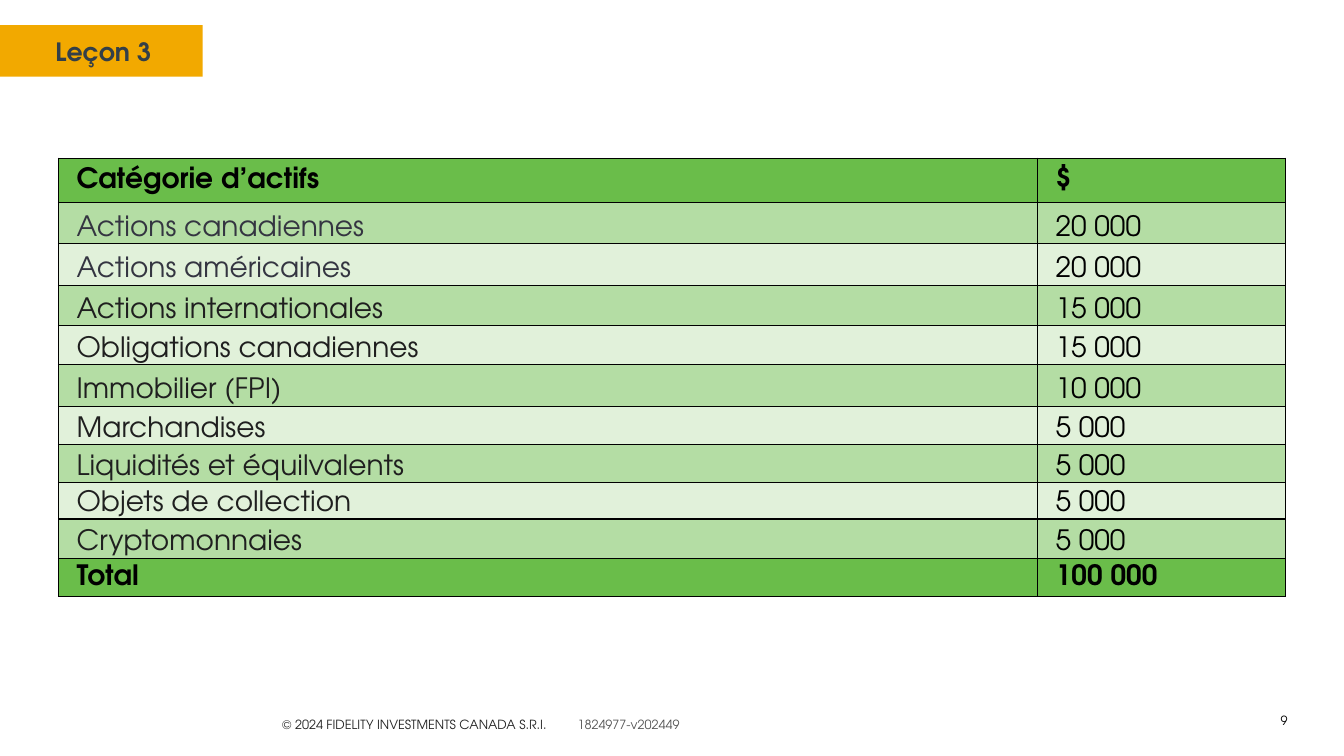
from lxml import etree
from pptx import Presentation
from pptx import util as u
from pptx.dml.color import RGBColor
from pptx.enum import shapes, text
from pptx.oxml.ns import qn

FONT = "TeX Gyre Adventor"
COLORS = {
    "black": "000000", "green": "6ABD4A", "amber": "F2A900", "slate": "333F48",
    "ink": "1F1F1F", "dusk": "343541", "legal": "222222", "grey": "545454",
}
ASSETS = [
    ("Actions canadiennes", 20000, "dusk"),
    ("Actions américaines", 20000, "dusk"),
    ("Actions internationales", 15000, "ink"),
    ("Obligations canadiennes", 15000, "ink"),
    ("Immobilier (FPI)", 10000, "ink"),
    ("Marchandises", 5000, "ink"),
    ("Liquidités et équilvalents", 5000, "ink"),
    ("Objets de collection", 5000, "ink"),
    ("Cryptomonnaies", 5000, "ink"),
]
COL_WIDTHS = [9.71, 2.46]
ROW_HEIGHTS = [0.44, 0.41, 0.41, 0.4, 0.39, 0.41, 0.38, 0.38, 0.36, 0.39, 0.38]


def style(run, size, color, bold=False):
    run.font.name, run.font.size, run.font.bold = FONT, u.Pt(size), bold
    run.font.color.rgb = RGBColor.from_string(COLORS[color])


def paint_cell(cell, alpha):
    cell.fill.solid()
    cell.fill.fore_color.rgb = RGBColor.from_string(COLORS["green"])
    tcPr = cell._tc.get_or_add_tcPr()
    if alpha < 100:
        clr = tcPr.find(".//" + qn("a:srgbClr"))
        etree.SubElement(clr, qn("a:alpha"), val=str(alpha * 1000))
    for i, side in enumerate(["lnL", "lnR", "lnT", "lnB"]):
        ln = etree.Element(qn("a:" + side), w=str(u.Pt(1)))
        fill = etree.SubElement(ln, qn("a:solidFill"))
        etree.SubElement(fill, qn("a:srgbClr"), val=COLORS["black"])
        tcPr.insert(i, ln)


prs = Presentation()
prs.slide_width, prs.slide_height = u.Inches(13.33), u.Inches(7.5)
s = prs.slides.add_slide(prs.slide_layouts[5])

# Lesson tag with the title on it
title = s.shapes.title
tag = s.shapes.add_shape(shapes.MSO_SHAPE.RECTANGLE, 0, u.Inches(0.25),
                         u.Inches(2.01), u.Inches(0.51))
tag.shadow.inherit = False
tag.fill.solid()
tag.fill.fore_color.rgb = RGBColor.from_string(COLORS["amber"])
tag.line.fill.background()
title._element.addprevious(tag._element)

title.left, title.top = u.Inches(0.45), u.Inches(0.31)
title.width, title.height = u.Inches(1.31), u.Inches(0.4)
tf = title.text_frame
tf.text = "Leçon 3"
tf.vertical_anchor = text.MSO_ANCHOR.MIDDLE
tf.paragraphs[0].alignment = text.PP_ALIGN.LEFT
style(tf.paragraphs[0].runs[0], 18, "slate", True)

# Asset table
total = sum(amount for _, amount, _ in ASSETS)
rows = [("Catégorie d’actifs", "$", "black")]
rows += [(name, f"{amount:,}".replace(",", " "), color) for name, amount, color in ASSETS]
rows += [("Total", f"{total:,}".replace(",", " "), "black")]

table = s.shapes.add_table(len(rows), 2, u.Inches(0.58), u.Inches(1.57),
                           u.Inches(sum(COL_WIDTHS)), u.Inches(sum(ROW_HEIGHTS))).table
for column, width in zip(table.columns, COL_WIDTHS):
    column.width = u.Inches(width)
for i, (name, amount, color) in enumerate(rows):
    table.rows[i].height = u.Inches(ROW_HEIGHTS[i])
    strong = i in (0, len(rows) - 1)
    for j, label in enumerate([name, amount]):
        cell = table.cell(i, j)
        cell.text = label
        p = cell.text_frame.paragraphs[0]
        style(p.runs[0], 20, "black" if j else color, strong)
        cell.margin_left = cell.margin_right = u.Inches(0.18 if strong else 0.03)
        cell.margin_top = cell.margin_bottom = u.Inches(0 if strong else 0.02)
        cell.vertical_anchor = text.MSO_ANCHOR.MIDDLE if strong else text.MSO_ANCHOR.BOTTOM
        if not strong:
            p._p.get_or_add_pPr().set("indent", str(u.Inches(0.15)))
        paint_cell(cell, 100 if strong else 50 if i % 2 else 20)

# Footer: copyright line and document code, set apart by a tab stop
tf = s.shapes.add_textbox(u.Inches(2.7), u.Inches(7.06),
                          u.Inches(4.19), u.Inches(0.25)).text_frame
tf.word_wrap = True
p = tf.paragraphs[0]
tabs = etree.SubElement(p._p.get_or_add_pPr(), qn("a:tabLst"))
etree.SubElement(tabs, qn("a:tab"), pos=str(u.Inches(2.93)), algn="l")
for words, color in [("© 2024 FIDELITY INVESTMENTS CANADA S.R.I.", "legal"),
                     ("\t1824977-v202449", "grey")]:
    r = p.add_run()
    r.text = words
    style(r, 9, color)

# Slide number
tf = s.shapes.add_textbox(u.Inches(12.17), u.Inches(7.06),
                          u.Inches(0.7), u.Inches(0.18)).text_frame
tf.word_wrap = True
tf.vertical_anchor = text.MSO_ANCHOR.MIDDLE
tf.text = "9"
tf.paragraphs[0].alignment = text.PP_ALIGN.RIGHT
style(tf.paragraphs[0].runs[0], 9, "black")

prs.save("out.pptx")
